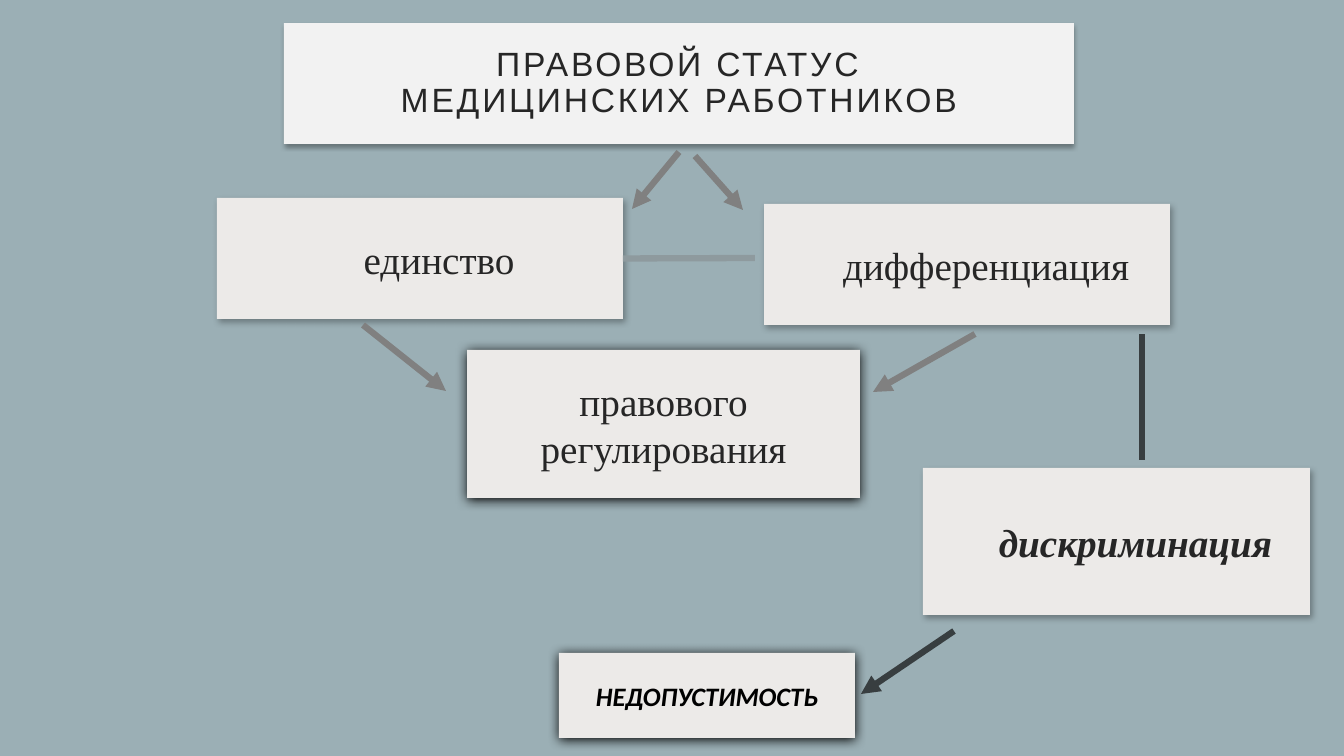
"""Build a slide with a scheme of the legal status of medical workers."""
from lxml.etree import SubElement
from pptx import Presentation
from pptx.dml.color import RGBColor
from pptx.enum.shapes import MSO_CONNECTOR, MSO_SHAPE
from pptx.enum.text import MSO_ANCHOR, PP_ALIGN
from pptx.oxml.ns import qn
from pptx.util import Pt

EMU_PER_PX = 12192000 / 1344
COLORS = {
    "background": "9BAFB5",
    "title": "F2F2F2",
    "box": "ECEAE8",
    "text": "262626",
    "black": "000000",
    "arrow": "808080",
    "link": "8E9A9E",
    "dark": "383E40",
}
TITLE_SHADOW = (32, 3.5, 2.2, 90)
SOFT_SHADOW = (30, 4.5, 2.6, 53)
STRONG_SHADOW = (100, 8.5, 1, 90)


def px(length):
    """Turn pixels into EMU."""
    return round(length * EMU_PER_PX)


def color(name):
    """Return the named colour."""
    return RGBColor.from_string(COLORS[name])


def add_shadow(shape, opacity, blur, distance, angle):
    """Give the shape an outer shadow, lengths in points."""
    shape.shadow.inherit = False
    effects = shape._element.spPr.find(qn("a:effectLst"))
    shadow = SubElement(
        effects, qn("a:outerShdw"), blurRad=str(Pt(blur)), dist=str(Pt(distance)),
        dir=str(angle * 60000), algn="ctr", rotWithShape="0")
    shade = SubElement(shadow, qn("a:srgbClr"), val=COLORS["black"])
    SubElement(shade, qn("a:alpha"), val=str(opacity * 1000))


def add_box(slide, bounds, text, shadow, fill="box", font_name="Times New Roman",
            size=28, text_color="text", emphasis=False, indent=0):
    """Add a shadowed rectangle with centred text."""
    shape = slide.shapes.add_shape(MSO_SHAPE.RECTANGLE, *map(px, bounds))
    shape.fill.solid()
    shape.fill.fore_color.rgb = color(fill)
    shape.line.fill.background()
    add_shadow(shape, *shadow)
    frame = shape.text_frame
    frame.word_wrap = True
    frame.vertical_anchor = MSO_ANCHOR.MIDDLE
    frame.text = text
    paragraph = frame.paragraphs[0]
    paragraph.alignment = PP_ALIGN.CENTER
    font = paragraph.font
    font.name = font_name
    font.size = Pt(size)
    font.color.rgb = color(text_color)
    font.bold = font.italic = emphasis
    if indent:
        paragraph._p.get_or_add_pPr().set("indent", str(px(indent)))
    return shape


def add_title(slide):
    """Add the spaced heading in its light box."""
    shape = add_box(slide, (284, 23, 790, 121), "ПРАВОВОЙ СТАТУС\vМЕДИЦИНСКИХ РАБОТНИКОВ",
                    TITLE_SHADOW, fill="title", font_name="Arial", size=24)
    frame = shape.text_frame
    frame.margin_left = frame.margin_right = px(30)
    frame.margin_top = frame.margin_bottom = px(20)
    paragraph = frame.paragraphs[0]
    paragraph.line_spacing = 0.9
    for run in paragraph.runs:
        run._r.get_or_add_rPr().set("spc", "200")


def add_line(slide, points, line_color, arrow=True):
    """Add a thick straight line, with an arrowhead at its end if asked."""
    line = slide.shapes.add_connector(MSO_CONNECTOR.STRAIGHT, *map(px, points))
    line.line.color.rgb = color(line_color)
    line.line.width = Pt(4.5)
    if arrow:
        SubElement(line.line._get_or_add_ln(), qn("a:tailEnd"), type="triangle")
    SubElement(line._element.spPr, qn("a:effectLst"))
    return line


def main():
    """Build and save the slide."""
    presentation = Presentation()
    presentation.slide_width = px(1344)
    presentation.slide_height = px(756)
    slide = presentation.slides.add_slide(presentation.slide_layouts[6])
    slide.background.fill.solid()
    slide.background.fill.fore_color.rgb = color("background")

    add_title(slide)
    add_box(slide, (923, 468, 387, 147), "дискриминация", SOFT_SHADOW,
            emphasis=True, indent=38)
    add_box(slide, (764, 204, 406, 121), "дифференциация", SOFT_SHADOW, indent=38)
    add_box(slide, (559, 653, 296, 85), "НЕДОПУСТИМОСТЬ", STRONG_SHADOW,
            font_name="Calibri", size=19, text_color="black", emphasis=True)
    add_box(slide, (467, 350, 393, 148), "правового регулирования", STRONG_SHADOW)
    unity = add_box(slide, (217, 198, 406, 121), "единство", SOFT_SHADOW, indent=38)

    link = add_line(slide, (623, 258, 755, 258), "link", arrow=False)
    link.begin_connect(unity, 3)
    add_line(slide, (1142, 460, 1142, 334), "dark", arrow=False)
    add_line(slide, (954, 631, 861, 694), "dark")
    for points in (
        (975, 334, 873, 392),
        (363, 325, 446, 391),
        (679, 152, 632, 209),
        (695, 156, 743, 210),
    ):
        add_line(slide, points, "arrow")

    presentation.save("out.pptx")


if __name__ == "__main__":
    main()
